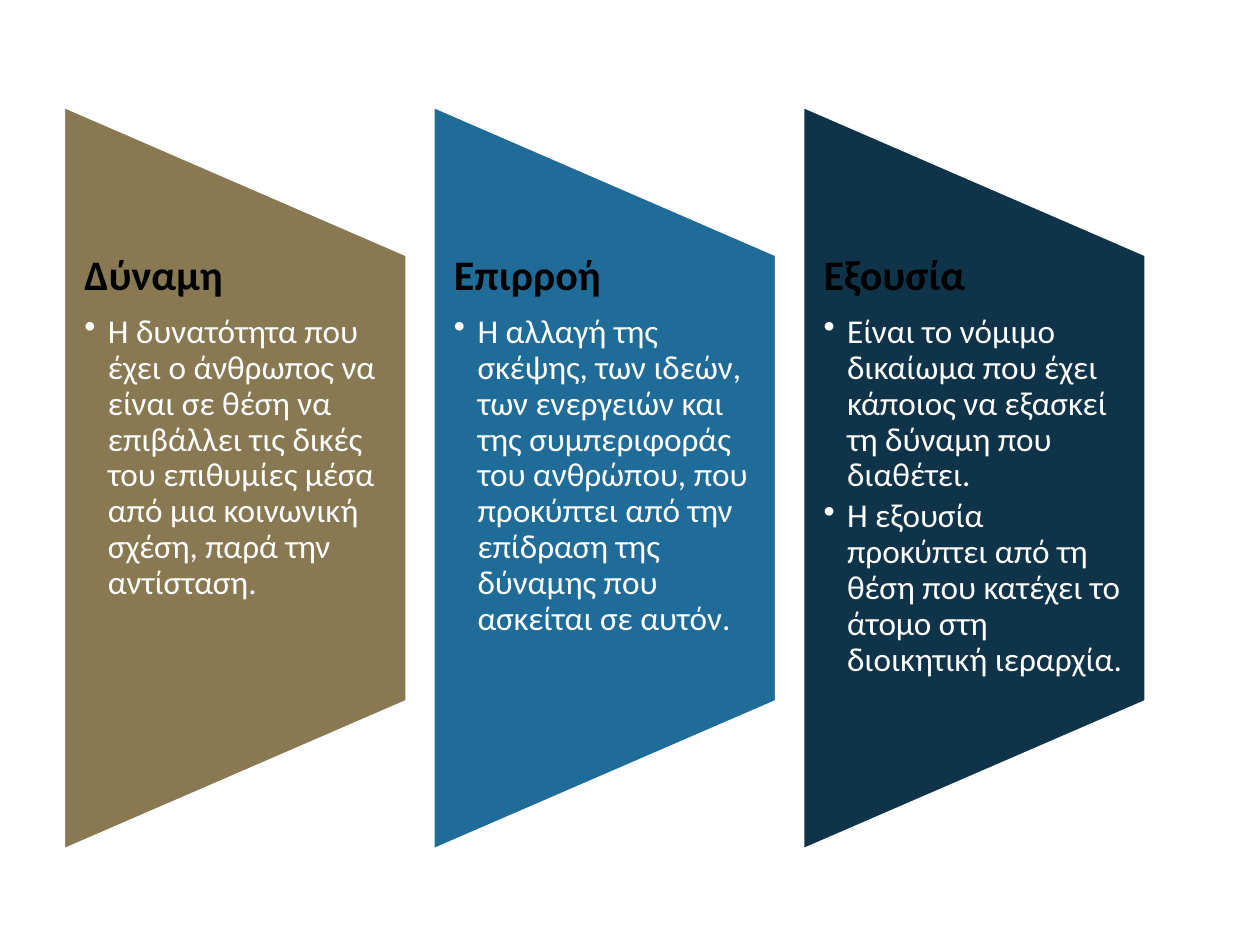
"""Three angled columns defining power, influence and authority."""
from dataclasses import dataclass

from lxml.etree import SubElement
from pptx import Presentation
from pptx.dml.color import RGBColor
from pptx.enum.shapes import MSO_SHAPE
from pptx.enum.text import MSO_ANCHOR, PP_ALIGN
from pptx.oxml.ns import qn
from pptx.util import Pt


@dataclass(frozen=True)
class Theme:
    font: str = "Calibri"
    heading_size: int = 24
    body_size: int = 19
    heading_color: str = "000000"
    body_color: str = "FFFFFF"
    outline: str = "FFFFFF"
    columns: tuple = ("887952", "206C98", "0F3449")


class ColumnSlide:
    def __init__(self, page, theme):
        self.page = page
        self.theme = theme

    def panel(self, center_x, center_y, width, height, color):
        panel = self.page.shapes.add_shape(
            MSO_SHAPE.FLOWCHART_MANUAL_OPERATION,
            Pt(center_x - height / 2), Pt(center_y - width / 2), Pt(height), Pt(width))
        panel.rotation = 270
        panel.shadow.inherit = False
        panel.fill.solid()
        panel.fill.fore_color.rgb = RGBColor.from_string(color)
        panel.line.color.rgb = RGBColor.from_string(self.theme.outline)
        panel.line.width = Pt(2)

    def text(self, left, top, width, height, heading, bullets):
        frame = self.page.shapes.add_textbox(Pt(left), Pt(top), Pt(width), Pt(height)).text_frame
        frame.word_wrap = True
        frame.vertical_anchor = MSO_ANCHOR.TOP
        frame.margin_left = frame.margin_right = Pt(12)
        frame.margin_top = frame.margin_bottom = 0
        theme = self.theme
        self.style(frame.paragraphs[0], heading, theme.heading_size, theme.heading_color, 0.35, True)
        for bullet in bullets:
            para = frame.add_paragraph()
            para.level = 1
            self.bullet(para)
            self.style(para, bullet, theme.body_size, theme.body_color, 0.15, False)

    def bullet(self, para):
        properties = para._p.get_or_add_pPr()
        properties.set("marL", str(Pt(13.5)))
        properties.set("indent", str(Pt(-13.5)))
        SubElement(properties, qn("a:buChar")).set("char", "•")

    def style(self, para, text, size, color, gap, bold):
        para.text = text
        para.alignment = PP_ALIGN.LEFT
        para.line_spacing = 0.9
        para.space_after = Pt(round(size * gap, 2))
        para.font.name = self.theme.font
        para.font.size = Pt(size)
        para.font.bold = bold
        para.font.color.rgb = RGBColor.from_string(color)


COLUMNS = (
    ("Δύναμη", (
        "Η δυνατότητα που έχει ο άνθρωπος να είναι σε θέση να επιβάλλει τις δικές "
        "του επιθυμίες μέσα από μια κοινωνική σχέση, παρά την αντίσταση.",)),
    ("Επιρροή", (
        "Η αλλαγή της σκέψης, των ιδεών, των ενεργειών και της συμπεριφοράς του "
        "ανθρώπου, που προκύπτει από την επίδραση της δύναμης που ασκείται σε αυτόν.",)),
    ("Εξουσία", (
        "Είναι το νόμιμο δικαίωμα που έχει κάποιος να εξασκεί τη δύναμη που διαθέτει.",
        "Η εξουσία προκύπτει από τη θέση που κατέχει το άτομο στη διοικητική ιεραρχία.")),
)


def main():
    deck = Presentation()
    deck.slide_width, deck.slide_height = Pt(720), Pt(540)
    theme = Theme()
    slide = ColumnSlide(deck.slides.add_slide(deck.slide_layouts[6]), theme)
    first_left, step, width = 36.2, 211.2, 196.4
    center_y, panel_height, text_height = 273.2, 425.4, 255.4
    for index, ((heading, bullets), color) in enumerate(zip(COLUMNS, theme.columns)):
        left = first_left + index * step
        slide.panel(left + width / 2, center_y, width, panel_height, color)
        slide.text(left, center_y - text_height / 2, width, text_height, heading, bullets)
    deck.save("out.pptx")


if __name__ == "__main__":
    main()
